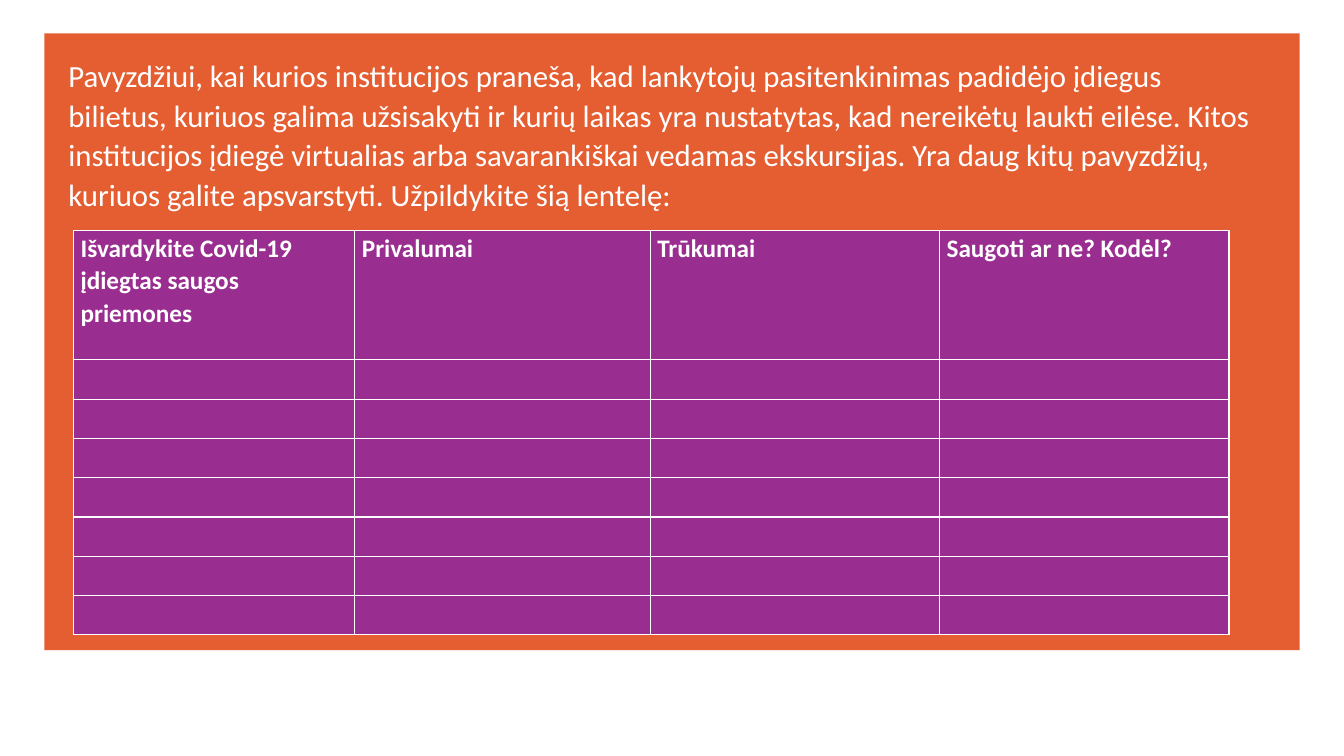
from dataclasses import dataclass

import pptx
import pptx.dml.color
import pptx.enum.shapes
import pptx.enum.text
import pptx.oxml
import pptx.oxml.ns
import pptx.util
from pptx.util import Inches


@dataclass(frozen=True)
class Theme:
    font: str = "Calibri"
    panel: str = "E45E32"
    cell: str = "9A2E90"
    light: str = "FFFFFF"
    body_size: int = 22
    header_size: int = 18
    border: int = 1
    line_spacing: float = 1.07
    space_after: int = 8


class SlideBuilder:
    def __init__(self, prs, theme):
        self.theme = theme
        self.s = prs.slides.add_slide(prs.slide_layouts[6])

    def fill(self, target, color):
        target.fill.solid()
        target.fill.fore_color.rgb = pptx.dml.color.RGBColor.from_string(color)

    def set_text(self, tf, text, size, bold=False):
        tf.text = text
        tf.word_wrap = True
        p = tf.paragraphs[0]
        p.line_spacing = self.theme.line_spacing
        p.space_after = pptx.util.Pt(self.theme.space_after)
        for r in p.runs:
            r.font.name = self.theme.font
            r.font.size = pptx.util.Pt(size)
            r.font.bold = bold
            r.font.color.rgb = pptx.dml.color.RGBColor.from_string(self.theme.light)

    def panel(self, left, top, width, height):
        sp = self.s.shapes.add_shape(
            pptx.enum.shapes.MSO_SHAPE.RECTANGLE,
            Inches(left), Inches(top), Inches(width), Inches(height))
        sp.shadow.inherit = False
        sp.line.fill.background()
        self.fill(sp, self.theme.panel)

    def text(self, left, top, width, height, text):
        sp = self.s.shapes.add_textbox(
            Inches(left), Inches(top), Inches(width), Inches(height))
        self.set_text(sp.text_frame, text, self.theme.body_size)

    def borders(self, cell):
        tc_pr = cell._tc.get_or_add_tcPr()
        width = pptx.util.Pt(self.theme.border)
        for i, side in enumerate(("lnL", "lnR", "lnT", "lnB")):
            tc_pr.insert(i, pptx.oxml.parse_xml(
                f'<a:{side} {pptx.oxml.ns.nsdecls("a")} w="{width}"><a:solidFill>'
                f'<a:srgbClr val="{self.theme.light}"/></a:solidFill></a:{side}>'))

    def table(self, left, top, widths, heights, headers):
        table = self.s.shapes.add_table(
            len(heights), len(widths), Inches(left), Inches(top),
            Inches(sum(widths)), Inches(sum(heights))).table
        table.horz_banding = False
        for column, width in zip(table.columns, widths):
            column.width = Inches(width)
        for row, height in zip(table.rows, heights):
            row.height = Inches(height)
        for cell in table.iter_cells():
            cell.margin_left = cell.margin_right = Inches(0.07)
            cell.margin_top = cell.margin_bottom = 0
            self.fill(cell, self.theme.cell)
            self.borders(cell)
        for cell, header in zip(table.rows[0].cells, headers):
            self.set_text(cell.text_frame, header, self.theme.header_size, bold=True)


def main():
    prs = pptx.Presentation()
    prs.slide_width = Inches(13.33)
    prs.slide_height = Inches(7.5)

    slide = SlideBuilder(prs, Theme())
    slide.panel(0.44, 0.33, 12.45, 6.12)
    slide.text(
        0.58, 0.49, 12.03, 1.75,
        "Pavyzdžiui, kai kurios institucijos praneša, kad lankytojų pasitenkinimas "
        "padidėjo įdiegus bilietus, kuriuos galima užsisakyti ir kurių laikas yra "
        "nustatytas, kad nereikėtų laukti eilėse. Kitos institucijos įdiegė virtualias "
        "arba savarankiškai vedamas ekskursijas. Yra daug kitų pavyzdžių, kuriuos "
        "galite apsvarstyti. Užpildykite šią lentelę:")
    slide.table(
        0.73, 2.29, [2.79, 2.93, 2.87, 2.87], [1.28] + [0.39] * 7,
        ["Išvardykite Covid-19 įdiegtas saugos priemones", "Privalumai",
         "Trūkumai", "Saugoti ar ne? Kodėl?"])
    prs.save("out.pptx")


if __name__ == "__main__":
    main()
